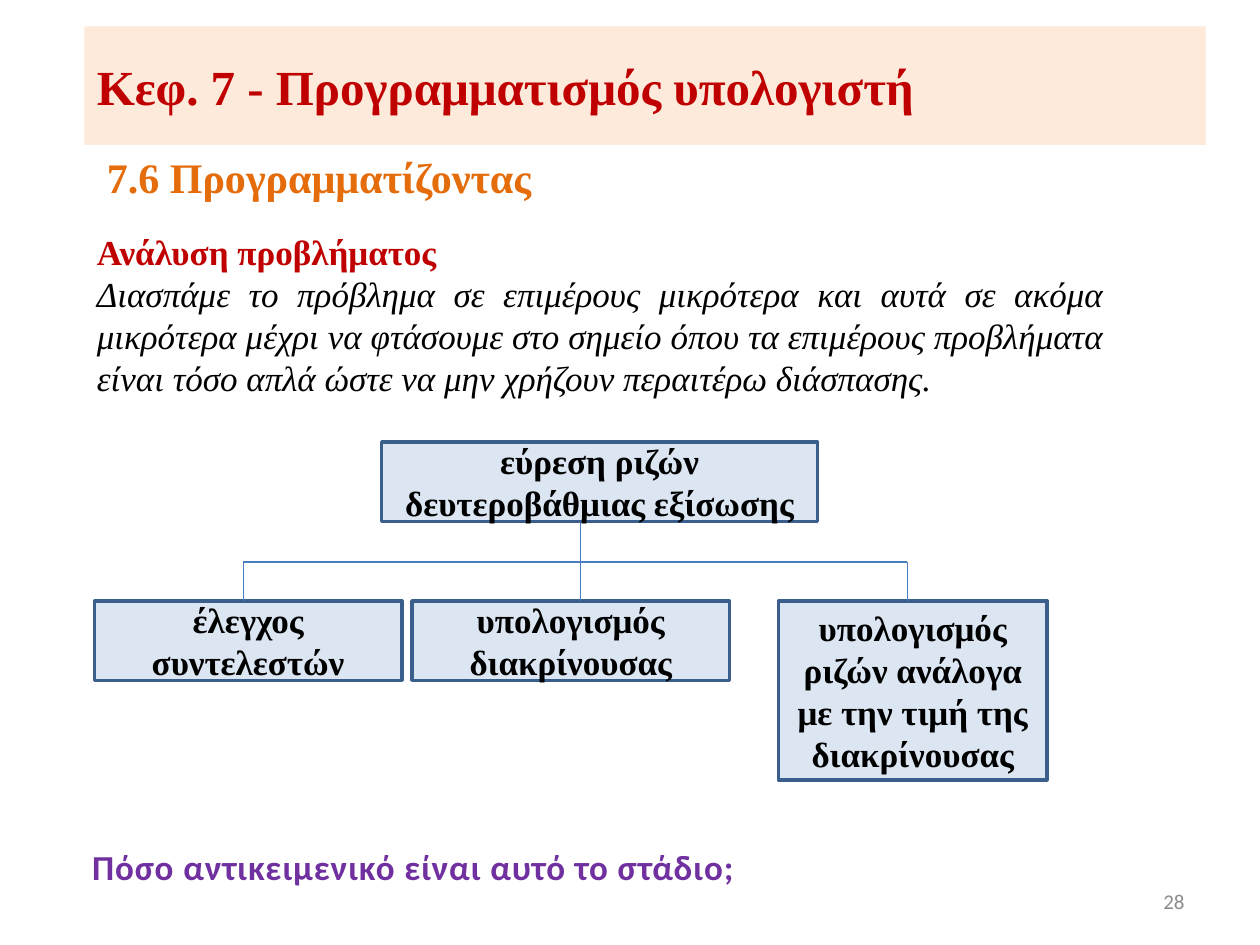
from dataclasses import dataclass
from typing import Optional

from lxml.etree import SubElement
from pptx import Presentation
from pptx.dml.color import RGBColor
from pptx.enum.shapes import MSO_CONNECTOR, MSO_SHAPE
from pptx.enum.text import MSO_ANCHOR, PP_ALIGN
from pptx.oxml.ns import qn
from pptx.util import Inches, Pt

# Grid: 100 columns by 75 rows
COLUMNS, ROWS = 100, 75
WIDTH, HEIGHT = Inches(10), Inches(7.5)

SERIF, SANS = "Times New Roman", "Calibri"
BLACK = RGBColor(0x00, 0x00, 0x00)
RED = RGBColor(0xC0, 0x00, 0x00)
ORANGE = RGBColor(0xE4, 0x6C, 0x0A)
PURPLE = RGBColor(0x70, 0x30, 0xA0)
GREY = RGBColor(0x8C, 0x8C, 0x8C)
PEACH = RGBColor(0xFD, 0xEA, 0xDA)
PALE_BLUE = RGBColor(0xDC, 0xE6, 0xF2)
BORDER_BLUE = RGBColor(0x3A, 0x5F, 0x8C)
LINE_BLUE = RGBColor(0x4B, 0x7E, 0xBC)


@dataclass
class Area:
    column: float
    row: float
    columns: float
    rows: float


@dataclass
class Span:
    text: str
    size: int
    color: RGBColor
    font: str = SERIF
    bold: bool = True
    italic: bool = False
    spacing: float = 0  # points between letters
    align: PP_ALIGN = PP_ALIGN.LEFT


def across(columns: float) -> int:
    return round(WIDTH * columns / COLUMNS)


def down(rows: float) -> int:
    return round(HEIGHT * rows / ROWS)


def place(area: Area) -> tuple[int, int, int, int]:
    return across(area.column), down(area.row), across(area.columns), down(area.rows)


def write(frame, spans: list[Span], wrap: bool = True) -> None:
    """Write each span as a paragraph of its own."""
    frame.word_wrap = wrap
    for index, span in enumerate(spans):
        para = frame.add_paragraph() if index else frame.paragraphs[0]
        para.alignment = span.align
        run = para.add_run()
        run.text = span.text
        font = run.font
        font.name, font.size = span.font, Pt(span.size)
        font.bold, font.italic = span.bold, span.italic
        font.color.rgb = span.color
        if span.spacing:
            run._r.get_or_add_rPr().set("spc", str(round(span.spacing * 100)))


def add_text(page, area: Area, *spans: Span, wrap: bool = True):
    box = page.shapes.add_textbox(*place(area))
    write(box.text_frame, list(spans), wrap)
    return box


def add_box(page, area: Area, span: Span, fill: RGBColor,
            border: Optional[RGBColor] = None) -> None:
    box = page.shapes.add_shape(MSO_SHAPE.RECTANGLE, *place(area))
    box.shadow.inherit = False
    box.fill.solid()
    box.fill.fore_color.rgb = fill
    if border is None:
        box.line.fill.background()
    else:
        box.line.color.rgb = border
        box.line.width = Pt(2)
    box.text_frame.vertical_anchor = MSO_ANCHOR.MIDDLE
    write(box.text_frame, [span])


def add_line(page, start: tuple[float, float], end: tuple[float, float]) -> None:
    line = page.shapes.add_connector(
        MSO_CONNECTOR.STRAIGHT,
        across(start[0]), down(start[1]), across(end[0]), down(end[1]))
    line.line.color.rgb = LINE_BLUE
    line.line.width = Pt(0.75)
    SubElement(line._element.spPr, qn("a:effectLst"))


def add_tree(page) -> None:
    trunk, root_bottom, bus, leaf_top = 46.1, 41.4, 44.6, 47.7
    branches = [19.3, trunk, 72]
    nodes = [
        (Area(30.3, 35.1, 34.6, 6.3), "εύρεση ριζών δευτεροβάθμιας εξίσωσης"),
        (Area(7.5, leaf_top, 24.4, 6.3), "έλεγχος συντελεστών"),
        (Area(32.7, leaf_top, 25.2, 6.3), "υπολογισμός διακρίνουσας"),
        (Area(61.8, leaf_top, 21.3, 14.2),
         "υπολογισμός ριζών ανάλογα με την τιμή της διακρίνουσας"),
    ]
    for area, text in nodes:
        span = Span(text, 20, BLACK, align=PP_ALIGN.CENTER)
        add_box(page, area, span, PALE_BLUE, BORDER_BLUE)

    # Trunk, crossbar and one drop per branch
    add_line(page, (trunk, root_bottom), (trunk, bus))
    add_line(page, (branches[0], bus), (branches[-1], bus))
    for column in branches:
        add_line(page, (column, bus), (column, leaf_top))


def main() -> None:
    deck = Presentation()
    deck.slide_width, deck.slide_height = WIDTH, HEIGHT
    page = deck.slides.add_slide(deck.slide_layouts[6])

    # Chapter banner and section heading
    add_box(page, Area(6.7, 2.1, 89, 9.4),
            Span("Κεφ. 7 - Προγραμματισμός υπολογιστή", 28, RED), PEACH)
    add_text(page, Area(7.5, 11.5, 70, 5.5), Span("7.6 Προγραμματίζοντας", 24, ORANGE))

    # Explanation
    explanation = add_text(
        page, Area(6.7, 17.8, 81.9, 14.5),
        Span("Ανάλυση προβλήματος", 20, RED),
        Span("Διασπάμε το πρόβλημα σε επιμέρους μικρότερα και αυτά σε ακόμα "
             "μικρότερα μέχρι να φτάσουμε στο σημείο όπου τα επιμέρους προβλήματα "
             "είναι τόσο απλά ώστε να μην χρήζουν περαιτέρω διάσπασης.",
             20, BLACK, bold=False, italic=True, align=PP_ALIGN.JUSTIFY))
    explanation.text_frame.paragraphs[1].space_after = Pt(12)

    # Problem breakdown
    add_tree(page)

    # Closing question and page number
    add_text(page, Area(6.1, 66.6, 53.4, 4.4),
             Span("Πόσο αντικειμενικό είναι αυτό το στάδιο;", 20, PURPLE, SANS,
                  spacing=0.5, align=PP_ALIGN.CENTER), wrap=False)
    number = add_text(page, Area(71.7, 69.5, 23.3, 4),
                      Span("28", 12, GREY, SANS, bold=False, align=PP_ALIGN.RIGHT))
    number.text_frame.vertical_anchor = MSO_ANCHOR.MIDDLE

    deck.save("out.pptx")


if __name__ == "__main__":
    main()
